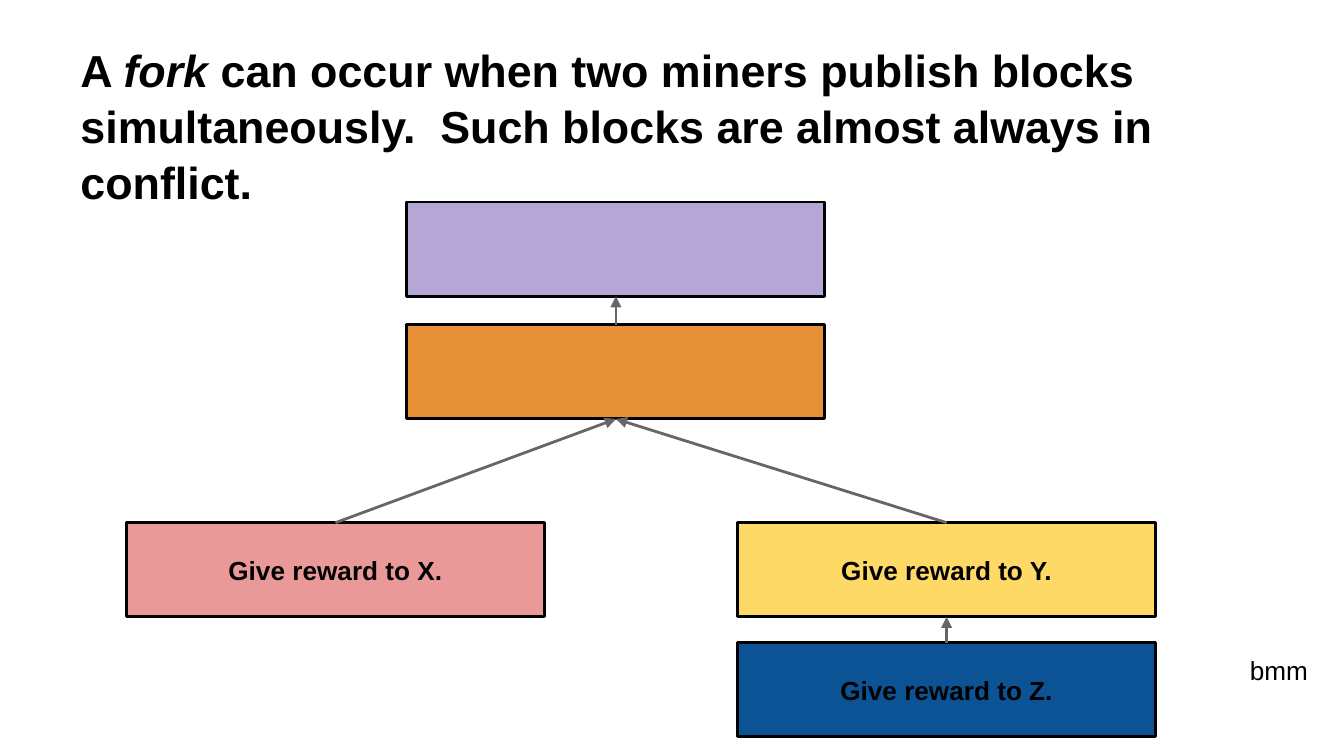
from lxml import etree
from pptx import Presentation
from pptx.dml.color import RGBColor
from pptx.enum.shapes import MSO_CONNECTOR, MSO_SHAPE
from pptx.enum.text import MSO_ANCHOR, MSO_AUTO_SIZE, PP_ALIGN
from pptx.oxml.ns import qn
from pptx.util import Cm, Pt

RECT = MSO_SHAPE.RECTANGLE
STRAIGHT = MSO_CONNECTOR.STRAIGHT
MIDDLE, BOTTOM = MSO_ANCHOR.MIDDLE, MSO_ANCHOR.BOTTOM
LEFT, CENTER = PP_ALIGN.LEFT, PP_ALIGN.CENTER
FIXED, GROW = MSO_AUTO_SIZE.NONE, MSO_AUTO_SIZE.SHAPE_TO_FIT_TEXT


def color(code):
    return RGBColor.from_string(code)


class Deck:
    face = "Arial"
    ink = "000000"
    gray = "666666"
    stroke = Pt(1.5)
    inset = Cm(0.25)
    block_w, block_h = 7.9, 1.78

    def __init__(self, width, height):
        self.prs = Presentation()
        self.prs.slide_width, self.prs.slide_height = Cm(width), Cm(height)
        self.slide = self.prs.slides.add_slide(self.prs.slide_layouts[5])

    def style(self, para, size, bold=False, align=LEFT):
        para.alignment = align
        font = para.font
        font.name, font.size, font.bold = self.face, Pt(size), bold
        font.color.rgb = color(self.ink)

    def pad(self, frame):
        frame.margin_left = frame.margin_right = self.inset
        frame.margin_top = frame.margin_bottom = self.inset

    def title(self, parts, left, top, width, height):
        """Fill the title from (text, italic) pairs."""
        box = self.slide.shapes.title
        box.left, box.top = Cm(left), Cm(top)
        box.width, box.height = Cm(width), Cm(height)
        frame = box.text_frame
        frame.auto_size, frame.word_wrap = FIXED, True
        frame.vertical_anchor = BOTTOM
        self.pad(frame)
        para = frame.paragraphs[0]
        self.style(para, 24, bold=True)
        para.line_spacing = 1.04
        for text, italic in parts:
            run = para.add_run()
            run.text = text
            if italic:
                run.font.italic = True

    def block(self, left, top, fill, text=""):
        box = self.slide.shapes.add_shape(
            RECT, Cm(left), Cm(top), Cm(self.block_w), Cm(self.block_h))
        box.shadow.inherit = False
        box.fill.solid()
        box.fill.fore_color.rgb = color(fill)
        box.line.color.rgb = color(self.ink)
        box.line.width = self.stroke
        if text:
            frame = box.text_frame
            frame.word_wrap, frame.vertical_anchor = True, MIDDLE
            self.pad(frame)
            para = frame.paragraphs[0]
            para.text = text
            self.style(para, 14, bold=True, align=CENTER)
        return box

    def arrow(self, child, parent):
        """Point from the child's top to the parent's bottom."""
        link = self.slide.shapes.add_connector(STRAIGHT, 0, 0, 0, 0)
        link.begin_connect(child, 0)
        link.end_connect(parent, 2)
        link.line.color.rgb = color(self.gray)
        link.line.width = self.stroke
        etree.SubElement(link.line._get_or_add_ln(), qn("a:tailEnd"), type="triangle")
        etree.SubElement(link._element.spPr, qn("a:effectLst"))

    def label(self, text, left, top, width, height):
        box = self.slide.shapes.add_textbox(
            Cm(left), Cm(top), Cm(width), Cm(height))
        frame = box.text_frame
        frame.word_wrap, frame.auto_size = False, GROW
        para = frame.paragraphs[0]
        para.text = text
        self.style(para, 14)


def main():
    deck = Deck(25.4, 14.29)
    deck.title([
        ("A ", False),
        ("fork ", True),
        ("can occur when two miners publish blocks simultaneously.  "
         "Such blocks are almost always in conflict.", False),
    ], 1.27, -1.09, 22.86, 5.28)

    mid, west, east = 7.69, 2.39, 13.94
    fork = 9.88
    root = deck.block(mid, 3.82, "B4A7D6")
    base = deck.block(mid, 6.14, "E69138")
    x = deck.block(west, fork, "EA9999", "Give reward to X.")
    y = deck.block(east, fork, "FFD966", "Give reward to Y.")
    z = deck.block(east, 12.15, "0B5394", "Give reward to Z.")
    for child, parent in [(base, root), (x, base), (y, base), (z, y)]:
        deck.arrow(child, parent)

    deck.label("bmm", 23.37, 12.24, 1.63, 0.86)
    deck.prs.save("out.pptx")


if __name__ == "__main__":
    main()
